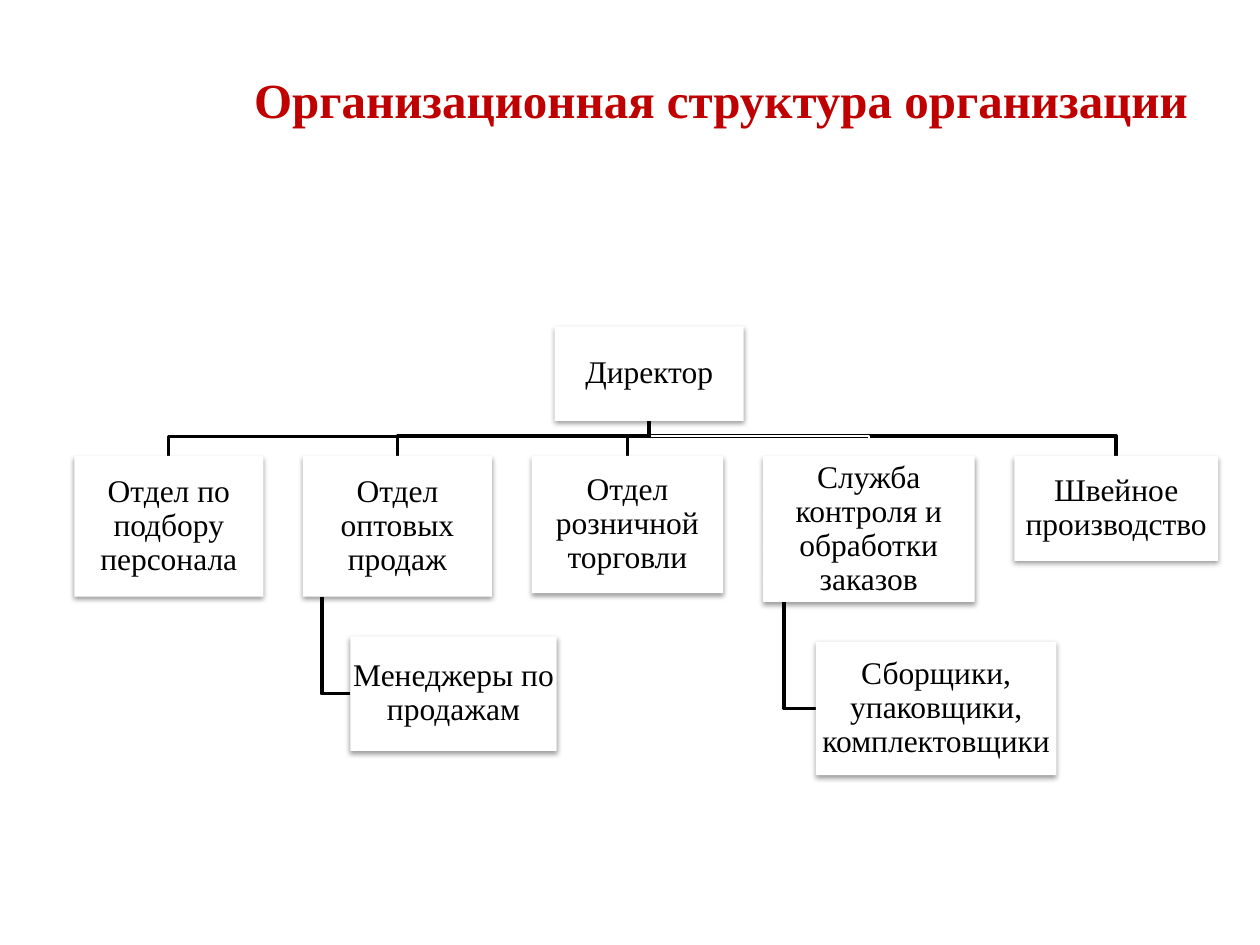
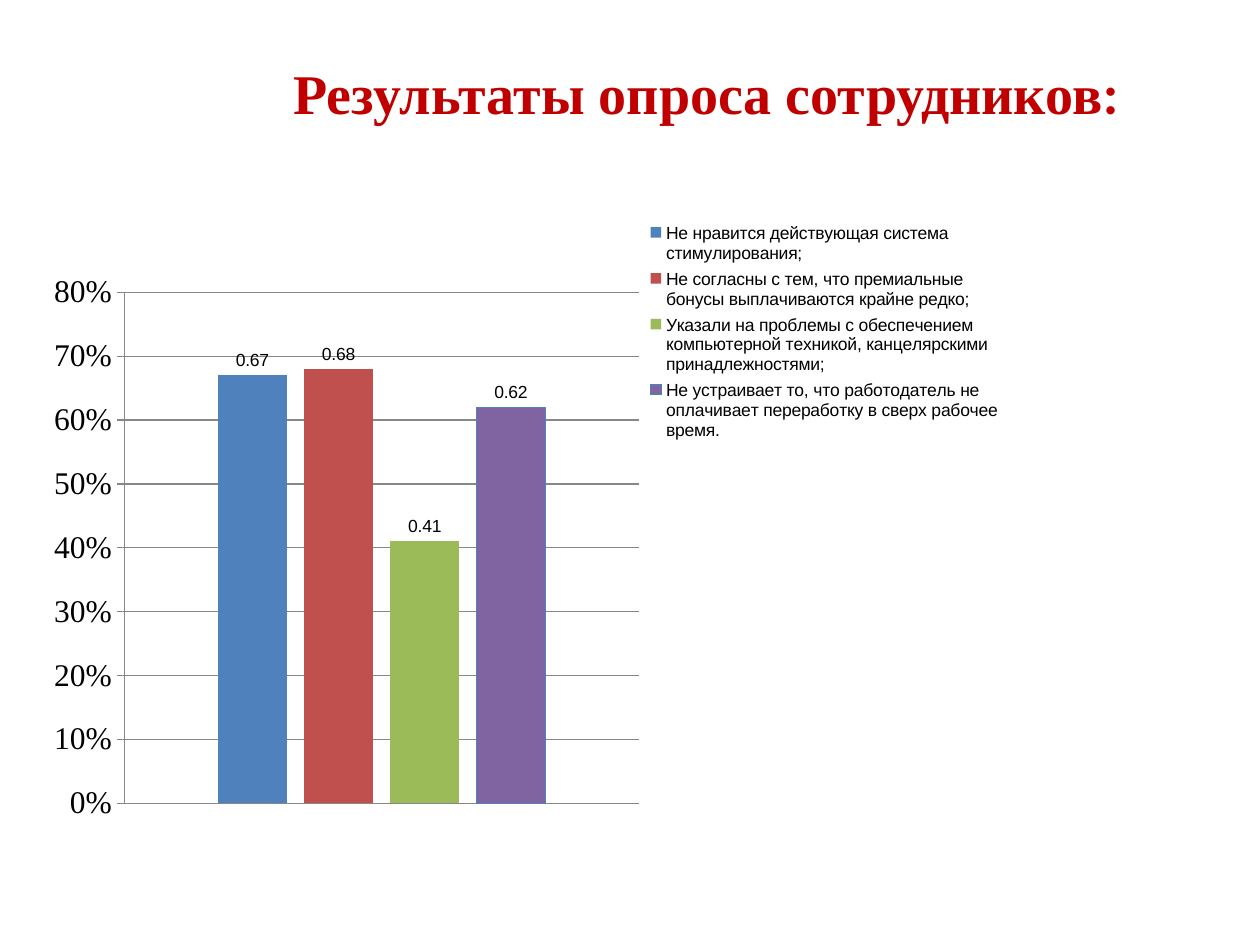
from pptx import Presentation
from pptx.chart.data import CategoryChartData
from pptx.dml.color import RGBColor
from pptx.enum.chart import XL_CHART_TYPE, XL_LABEL_POSITION, XL_LEGEND_POSITION, XL_TICK_MARK
from pptx.enum.shapes import MSO_SHAPE
from pptx.enum.text import MSO_ANCHOR, MSO_AUTO_SIZE, PP_ALIGN
from pptx.oxml import parse_xml
from pptx.oxml.ns import nsdecls, qn
from pptx.util import Pt

RED = RGBColor(0xC0, 0x00, 0x00)
BLACK = RGBColor(0x00, 0x00, 0x00)
WHITE = RGBColor(0xFF, 0xFF, 0xFF)
GRAY = RGBColor(0x87, 0x87, 0x87)
BLUE = RGBColor(0x4F, 0x81, 0xBD)
BRICK = RGBColor(0xC0, 0x50, 0x4D)
GREEN = RGBColor(0x9B, 0xBB, 0x59)
PURPLE = RGBColor(0x80, 0x64, 0xA2)
SERIF = "Times New Roman"


def write(para, text, size=18, color=BLACK, bold=False, font=SERIF, align=PP_ALIGN.LEFT, spacing=None):
    para.alignment = align
    para.line_spacing = spacing
    span = para.add_run()
    span.text = text
    span.font.name = font
    span.font.size = Pt(size)
    span.font.bold = bold
    span.font.color.rgb = color


def add_titled_page(deck, spans, left, top, width, height, size, wrap):
    page = deck.slides.add_slide(deck.slide_layouts[5])
    title = page.shapes.title
    title.left, title.top, title.width, title.height = Pt(left), Pt(top), Pt(width), Pt(height)
    frame = title.text_frame
    frame.auto_size = MSO_AUTO_SIZE.NONE
    frame.word_wrap = wrap
    frame.vertical_anchor = MSO_ANCHOR.TOP
    for text, font in spans:
        write(frame.paragraphs[0], text, size=size, color=RED, bold=True, font=font)
    return page


deck = Presentation()
deck.slide_width, deck.slide_height = Pt(720), Pt(540)

page = add_titled_page(deck, [("Организационная структура организации", SERIF)],
                       138, 36, 576, 41, 28, True)

GAP = 22.65
DEPARTMENT_TOP = 260.5
BUS_Y = 249.3
director = ("Директор", 317, 186.5, 108, 54)
director_x, director_bottom = 371, 240.5

departments = [
    ("Отдел по подбору персонала", 108, 80.5, 1.5, BLACK, None),
    ("Отдел оптовых продаж", 108, 80.5, 2, BLACK, ("Менеджеры по продажам", 118, 65.5)),
    ("Отдел розничной торговли", 109.5, 78.5, 2, BLACK, None),
    ("Служба контроля и обработки заказов", 121, 83.5, 1, WHITE,
     ("Сборщики, упаковщики, комплектовщики", 137.5, 76.3)),
    ("Швейное производство", 116.5, 60, 2, BLACK, None),
]

boxes = [director]
links = []
left = 42.5
for name, width, height, weight, color, team in departments:
    boxes.append((name, left, DEPARTMENT_TOP, width, height))
    center = left + width / 2
    links.append((weight, color, [(director_x, director_bottom), (director_x, BUS_Y),
                                  (center, BUS_Y), (center, DEPARTMENT_TOP)]))
    if team:
        team_name, team_width, team_height = team
        bottom = DEPARTMENT_TOP + height
        team_left, team_top = left + width / 4, bottom + GAP
        team_middle = team_top + team_height / 2
        stem = left + width / 10
        boxes.append((team_name, team_left, team_top, team_width, team_height))
        links.append((2, BLACK, [(stem, bottom), (stem, team_middle), (team_left, team_middle)]))
    left += width + GAP

for weight, color, points in reversed(links):
    corners = [(Pt(x), Pt(y)) for x, y in points]
    builder = page.shapes.build_freeform(*corners[0])
    builder.add_line_segments(corners[1:], close=False)
    link = builder.convert_to_shape()
    link.shadow.inherit = False
    link.fill.background()
    link.line.color.rgb = color
    link.line.width = Pt(weight)

for name, left, top, width, height in boxes:
    box = page.shapes.add_shape(MSO_SHAPE.RECTANGLE, Pt(left), Pt(top), Pt(width), Pt(height))
    box.fill.solid()
    box.fill.fore_color.rgb = WHITE
    box.line.fill.background()
    box.shadow.inherit = False
    box.element.spPr.find(qn("a:effectLst")).append(parse_xml(
        f'<a:outerShdw {nsdecls("a")} blurRad="{Pt(3.1)}" dist="{Pt(1.6)}" dir="5400000" rotWithShape="0">'
        '<a:srgbClr val="000000"><a:alpha val="38000"/></a:srgbClr></a:outerShdw>'))
    frame = box.text_frame
    frame.word_wrap = True
    frame.vertical_anchor = MSO_ANCHOR.MIDDLE
    frame.margin_left = frame.margin_right = frame.margin_top = frame.margin_bottom = Pt(0.9)
    write(frame.paragraphs[0], name, align=PP_ALIGN.CENTER, spacing=0.9)

page = add_titled_page(deck, [("Результаты опроса сотрудников", SERIF), (":", "Calibri")],
                       160.5, 30, 500, 45.5, 32, False)

answers = [
    ("Не нравится действующая система\nстимулирования;", 0.67, BLUE),
    ("Не согласны с тем, что премиальные\nбонусы выплачиваются крайне редко;", 0.68, BRICK),
    ("Указали на проблемы с обеспечением\nкомпьютерной техникой, канцелярскими\nпринадлежностями;",
     0.41, GREEN),
    ("Не устраивает то, что работодатель не\nоплачивает переработку в сверх рабочее время.",
     0.62, PURPLE),
]
data = CategoryChartData()
data.categories = ["1"]
for answer, share, color in answers:
    data.add_series(answer, [share])
chart = page.shapes.add_chart(XL_CHART_TYPE.COLUMN_CLUSTERED, Pt(12), Pt(88), Pt(678), Pt(452), data).chart
chart.has_title = False
chart.font.name = "Arial"
chart.font.size = Pt(10)
chart.font.color.rgb = BLACK
chart.category_axis.visible = False

axis = chart.value_axis
axis.minimum_scale, axis.maximum_scale, axis.major_unit = 0, 0.8, 0.1
axis.major_tick_mark = XL_TICK_MARK.OUTSIDE
axis.tick_labels.number_format = "0%"
axis.tick_labels.number_format_is_linked = False
axis.tick_labels.font.name = SERIF
axis.tick_labels.font.size = Pt(18)
axis.tick_labels.font.color.rgb = BLACK
for line in (axis.format.line, axis.major_gridlines.format.line):
    line.color.rgb = GRAY
    line.width = Pt(0.75)

plot = chart.plots[0]
plot.vary_by_categories = False
plot.gap_width = 272
plot.overlap = -25
plot.has_data_labels = True
plot.data_labels.show_value = True
plot.data_labels.number_format = "General"
plot.data_labels.number_format_is_linked = False
plot.data_labels.position = XL_LABEL_POSITION.OUTSIDE_END
for series, (answer, share, color) in zip(plot.series, answers):
    series.format.fill.solid()
    series.format.fill.fore_color.rgb = color
series.format.line.color.rgb = BLUE
series.format.line.width = Pt(0.75)

chart.has_legend = True
chart.legend.position = XL_LEGEND_POSITION.RIGHT
chart.legend.include_in_layout = False
for tag, index, target, frame in [
    ("c:plotArea", 0, '<c:layoutTarget val="inner"/>', (0.087, 0.175, 0.434, 0.646)),
    ("c:legend", 1, "", (0.522, 0.08, 0.31, 0.29)),
]:
    parent = chart.element.find(".//" + qn(tag))
    for layout in parent.findall(qn("c:layout")):
        parent.remove(layout)
    modes = '<c:xMode val="edge"/><c:yMode val="edge"/>'
    sizes = "".join(f'<c:{key} val="{value}"/>' for key, value in zip("xywh", frame))
    parent.insert(index, parse_xml(
        f'<c:layout {nsdecls("c")}><c:manualLayout>{target}{modes}{sizes}</c:manualLayout></c:layout>'))

deck.save("out.pptx")
